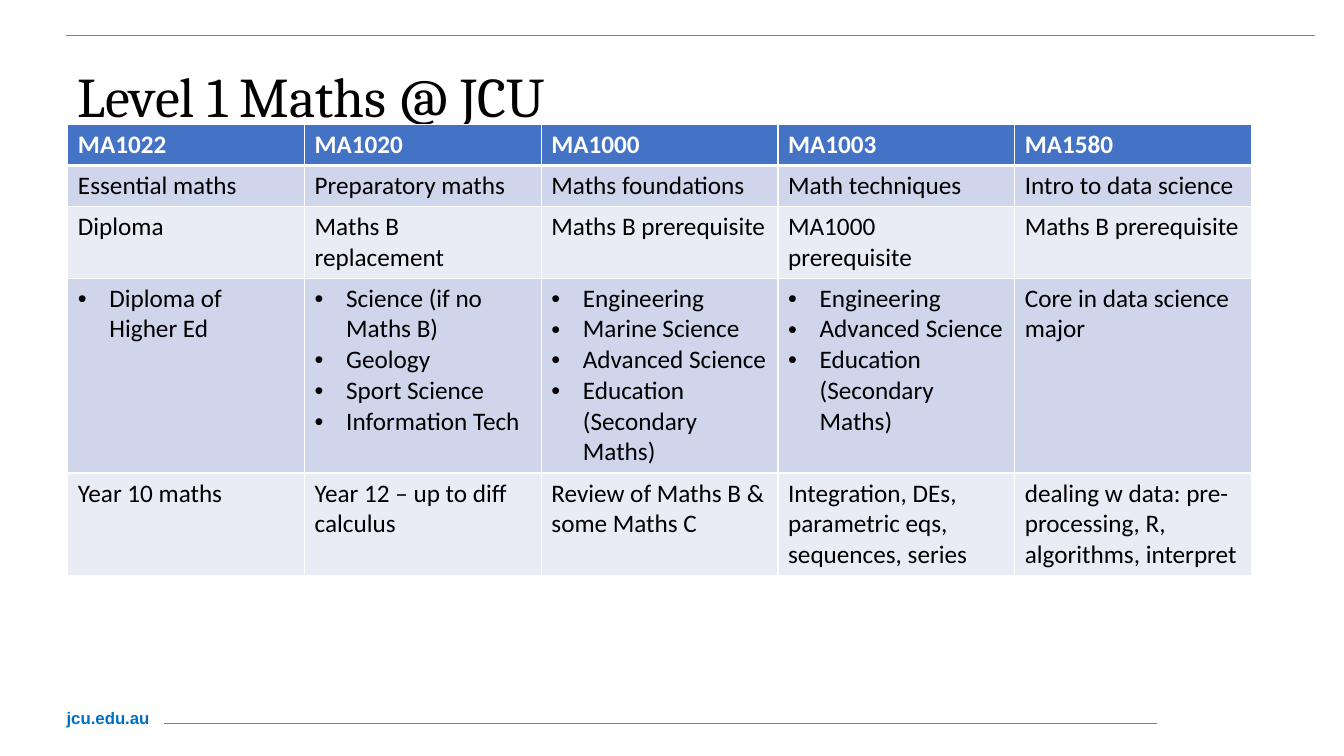
from lxml.etree import SubElement as add_element
from pptx import Presentation
from pptx.dml.color import RGBColor as Color
from pptx.enum.shapes import MSO_CONNECTOR as Connector
from pptx.enum.text import MSO_ANCHOR as Anchor
from pptx.oxml.ns import qn
from pptx.util import Pt

theme = {
    "black": "000000",
    "white": "FFFFFF",
    "rule": "00B0F0",
    "link": "0070C0",
    "header": "4472C4",
    "bands": ["CFD5EA", "E9EBF5"],
    "title_size": 40,
    "table_size": 18,
    "footer_size": 12,
}


def write(frame, text, *, font, size, color, bold=False, bullet=False,
          line_spacing=None, anchor=Anchor.TOP):
    frame.word_wrap = True
    frame.vertical_anchor = anchor
    for index, line in enumerate(text.split("\n")):
        para = frame.paragraphs[0] if index == 0 else frame.add_paragraph()
        if bullet:
            props = para._p.get_or_add_pPr()
            props.set("marL", str(Pt(22.5)))
            props.set("indent", str(-Pt(22.5)))
            add_element(props, qn("a:buFont"), typeface="Arial")
            add_element(props, qn("a:buChar"), char="•")
        if line_spacing:
            para.line_spacing = line_spacing
        span = para.add_run()
        span.text = line
        span.font.name = font
        span.font.size = Pt(size)
        span.font.bold = bold
        span.font.color.rgb = Color.from_string(color)


def add_border(cell, side, width):
    border = add_element(cell._tc.get_or_add_tcPr(), qn(f"a:ln{side}"), w=str(Pt(width)))
    fill = add_element(border, qn("a:solidFill"))
    add_element(fill, qn("a:srgbClr"), val=theme["white"])


deck = Presentation()
deck.slide_width = Pt(960)
deck.slide_height = Pt(540)
page = deck.slides.add_slide(deck.slide_layouts[6])

for left, right, y in [(47.5, 939, 25.2), (117.5, 826.5, 517)]:
    rule = page.shapes.add_connector(Connector.STRAIGHT, Pt(left), Pt(y), Pt(right), Pt(y))
    rule.line.color.rgb = Color.from_string(theme["rule"])
    rule.line.width = Pt(0.5)
    add_element(rule._element.spPr, qn("a:effectLst"))

footer = page.shapes.add_textbox(Pt(40.5), Pt(502), Pt(88.5), Pt(21.6))
write(footer.text_frame, "jcu.edu.au", font="Arial", size=theme["footer_size"],
      color=theme["link"], bold=True)

title = page.shapes.add_textbox(Pt(48.5), Pt(46), Pt(845), Pt(49.7))
write(title.text_frame, "Level 1 Maths @ JCU", font="Cambria", size=theme["title_size"],
      color=theme["black"], line_spacing=0.9, anchor=Anchor.MIDDLE)

subjects = [
    ["MA1022", "MA1020", "MA1000", "MA1003", "MA1580"],
    ["Essential maths", "Preparatory maths", "Maths foundations", "Math techniques",
     "Intro to data science"],
    ["Diploma", "Maths B replacement", "Maths B prerequisite", "MA1000 prerequisite",
     "Maths B prerequisite"],
    ["Diploma of Higher Ed",
     "Science (if no Maths B)\nGeology\nSport Science\nInformation Tech",
     "Engineering\nMarine Science\nAdvanced Science\nEducation (Secondary Maths)",
     "Engineering\nAdvanced Science\nEducation (Secondary Maths)",
     "Core in data science major"],
    ["Year 10 maths", "Year 12 – up to diff calculus", "Review of Maths B & some Maths C",
     "Integration, DEs, parametric eqs, sequences, series",
     "dealing w data: pre-processing, R, algorithms, interpret"],
]
row_lines = [1, 1, 2, 6, 3]
row_heights = [7.2 + 22 * lines for lines in row_lines]
degree_row = 3
column_width = 169.1

table = page.shapes.add_table(len(subjects), len(subjects[0]), Pt(48.5), Pt(89.1),
                              Pt(column_width * 5), Pt(sum(row_heights))).table
for column in table.columns:
    column.width = Pt(column_width)

for row, texts in enumerate(subjects):
    table.rows[row].height = Pt(row_heights[row])
    is_header = row == 0
    for column, text in enumerate(texts):
        cell = table.cell(row, column)
        widths = {"L": 1, "R": 1, "T": 3 if row == 1 else 1, "B": 3 if is_header else 1}
        for side, width in widths.items():
            add_border(cell, side, width)
        cell.fill.solid()
        band = theme["header"] if is_header else theme["bands"][(row - 1) % 2]
        cell.fill.fore_color.rgb = Color.from_string(band)
        write(cell.text_frame, text, font="Calibri", size=theme["table_size"],
              color=theme["white"] if is_header else theme["black"], bold=is_header,
              bullet=row == degree_row and column < 4)

deck.save("out.pptx")
